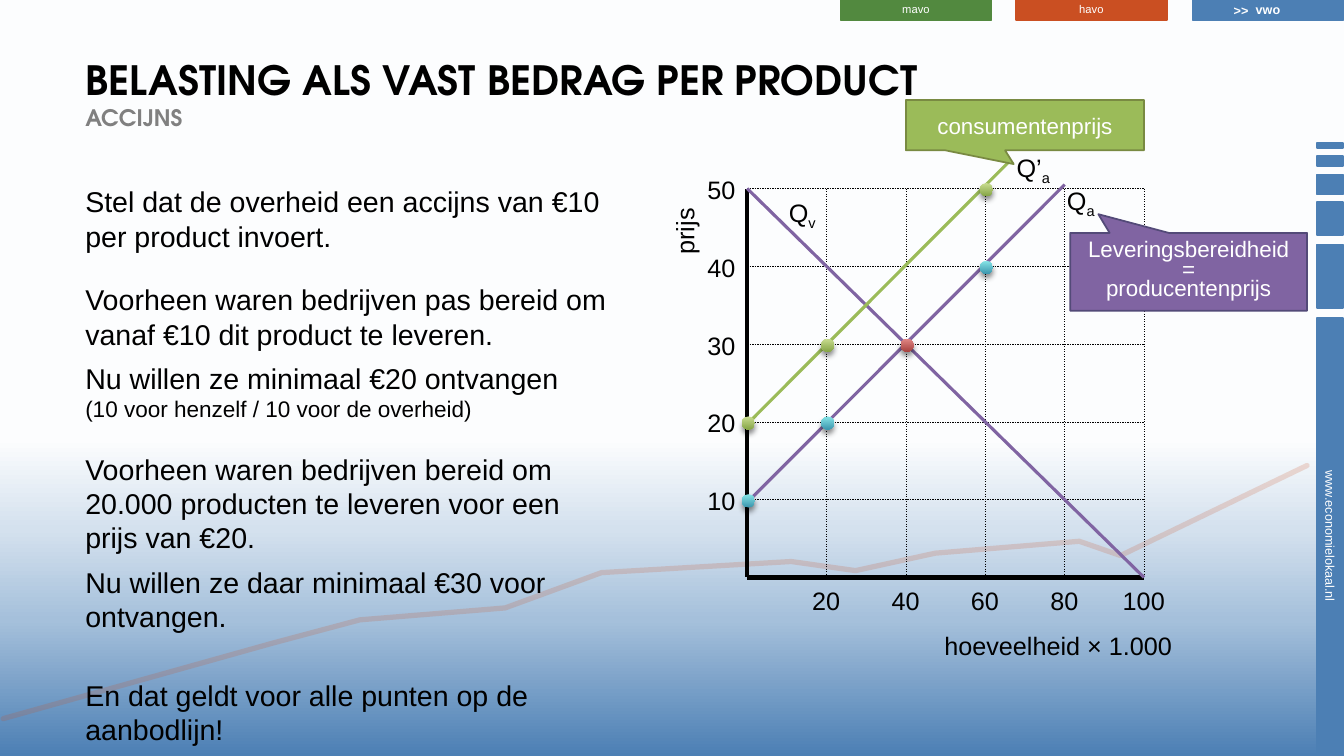
from lxml import etree
from pptx import Presentation
from pptx.dml.color import RGBColor
from pptx.enum.dml import MSO_LINE
from pptx.enum.shapes import MSO_CONNECTOR, MSO_SHAPE
from pptx.enum.text import MSO_ANCHOR, PP_ALIGN
from pptx.oxml.ns import qn
from pptx.util import Cm, Pt

STRAIGHT = MSO_CONNECTOR.STRAIGHT
RECTANGLE = MSO_SHAPE.RECTANGLE
OVAL = MSO_SHAPE.OVAL
CALLOUT = MSO_SHAPE.RECTANGULAR_CALLOUT
DASH = MSO_LINE.DASH
MIDDLE = MSO_ANCHOR.MIDDLE
CENTER = PP_ALIGN.CENTER

BLUE, ORANGE, LEAF = "4C7FB4", "CA4F22", "52893F"
PURPLE, GREEN, BLACK, WHITE = "8064A2", "9BBB59", "000000", "FFFFFF"
RED_DOT, CYAN_DOT, GREEN_DOT = ("E18785", "A7423F"), ("85E4E6", "3C96AE"), ("C9DD90", "86A547")

ORIGIN_X, ORIGIN_Y = 18.83, 14.55
CM_PER_QUANTITY, CM_PER_PRICE = 0.1, 0.196
MAX_QUANTITY, MAX_PRICE = 100, 50

SIDE_BARS = [(13.51, 11, "www.economielokaal.nl"), (6.96, 1.6, ""), (5.51, 0.84, ""),
             (4.65, 0.5, ""), (4.06, 0.25, ""), (3.66, 0.13, "")]
TREND = [(32.94, 11.73), (28.24, 14), (27.2, 13.64), (23.57, 13.94), (21.56, 14.38),
         (19.94, 14.15), (15.16, 14.43), (12.73, 15.32), (9.07, 15.62), (6.86, 16.21),
         (0.08, 18.11)]
STORY = [
    (0, "Stel dat de overheid een accijns van €10 per product invoert.", ""),
    (21, "Voorheen waren bedrijven pas bereid om vanaf €10 dit product te leveren.", ""),
    (7.2, "Nu willen ze minimaal €20 ontvangen\n", "(10 voor henzelf / 10 voor de overheid)"),
    (21, "Voorheen waren bedrijven bereid om 20.000 producten te leveren voor een prijs van €20.", ""),
    (7.2, "Nu willen ze daar minimaal €30 voor ontvangen.", ""),
    (32, "En dat geldt voor alle punten op de aanbodlijn!", ""),
]


def color(hex_value):
    """Turn a hex string into a colour."""
    return RGBColor.from_string(hex_value)


def write(paragraph, text, size=18, ink=BLACK, font="Arial", bold=False, baseline=None):
    """Append formatted text to a paragraph, breaking lines at newlines."""
    for number, line in enumerate(text.split("\n")):
        if number:
            paragraph.add_line_break()
        if not line:
            continue
        run = paragraph.add_run()
        run.text = line
        run.font.size, run.font.name, run.font.bold = Pt(size), font, bold
        run.font.color.rgb = color(ink)
        if baseline:
            run.font._element.set("baseline", str(baseline * 1000))


def gradient(owner, fill, stops, angle):
    """Give a background or shape a linear gradient of (percent, hex) stops."""
    fill.gradient()
    stop_list = owner._element.find(".//" + qn("a:gsLst"))
    for stop in list(stop_list):
        stop_list.remove(stop)
    for percent, hex_value in stops:
        stop = etree.SubElement(stop_list, qn("a:gs"), pos=str(percent * 1000))
        etree.SubElement(stop, qn("a:srgbClr"), val=hex_value)
    stop_list.getparent().find(qn("a:lin")).set("ang", str(angle * 60000))


def box(slide, kind, left, top, width, height, fill, outline):
    """Add a flat filled shape with middle-anchored text."""
    shape = slide.shapes.add_shape(kind, Cm(left), Cm(top), Cm(width), Cm(height))
    shape.shadow.inherit = False
    shape.fill.solid()
    shape.fill.fore_color.rgb = color(fill)
    shape.line.color.rgb = color(outline)
    shape.line.width = Pt(1.25)
    shape.text_frame.vertical_anchor = MIDDLE
    shape.text_frame.word_wrap = True
    shape.text_frame.paragraphs[0].alignment = CENTER
    return shape


def tab(slide, left, top, width, height, fill, text="", size=8, bold=False, rotation=0):
    """Add a coloured tab of the frame around the slide."""
    shape = box(slide, RECTANGLE, left, top, width, height, fill, fill)
    shape.rotation = rotation
    shape.text_frame.margin_top, shape.text_frame.margin_bottom = 0, Cm(0.03)
    write(shape.text_frame.paragraphs[0], text, size=size, ink=WHITE, bold=bold)


def label(slide, left, top, width, text, subscript="", height=1.02, rotation=0, wrap=False, **look):
    """Add a text box with an optional subscript and return its frame."""
    holder = slide.shapes.add_textbox(Cm(left), Cm(top), Cm(width), Cm(height))
    holder.rotation = rotation
    holder.text_frame.word_wrap = wrap
    paragraph = holder.text_frame.paragraphs[0]
    write(paragraph, text, **look)
    write(paragraph, subscript, baseline=-25)
    return holder.text_frame


def at(quantity, price):
    """Convert a quantity and price to slide coordinates in centimetres."""
    return ORIGIN_X + quantity * CM_PER_QUANTITY, ORIGIN_Y - price * CM_PER_PRICE


def line(slide, start, end, ink=BLACK, width=3, dash=None):
    """Draw a line between two (quantity, price) points."""
    (x1, y1), (x2, y2) = at(*start), at(*end)
    connector = slide.shapes.add_connector(STRAIGHT, Cm(x1), Cm(y1), Cm(x2), Cm(y2))
    connector.line.color.rgb = color(ink)
    connector.line.width = Pt(width)
    if dash:
        connector.line.dash_style = dash
    etree.SubElement(connector._element.spPr, qn("a:effectLst"))


def dots(slide, points, shades):
    """Mark (quantity, price) points with shaded, shadowed dots."""
    size = 0.33
    for point in points:
        x, y = at(*point)
        dot = slide.shapes.add_shape(OVAL, Cm(x - size / 2 + 0.03), Cm(y - size / 2 + 0.03),
                                     Cm(size), Cm(size))
        gradient(dot, dot.fill, zip((0, 100), shades), 90)
        dot.line.fill.background()
        dot.shadow.inherit = False
        effects = dot._element.spPr.find(qn("a:effectLst"))
        shadow = etree.SubElement(effects, qn("a:outerShdw"), blurRad=str(Pt(4)),
                                  dist=str(Pt(3)), dir="5400000", rotWithShape="0")
        shade = etree.SubElement(shadow, qn("a:srgbClr"), val=BLACK)
        etree.SubElement(shade, qn("a:alpha"), val="46000")


def callout(slide, left, top, width, height, fill, outline, tip, text, spacing=None):
    """Add a speech callout whose tip is relative to its centre."""
    shape = box(slide, CALLOUT, left, top, width, height, fill, outline)
    shape.adjustments[0], shape.adjustments[1] = tip
    paragraph = shape.text_frame.paragraphs[0]
    paragraph.line_spacing = spacing
    write(paragraph, text, size=16, ink=WHITE)


def frame(slide):
    """Draw the background, tabs, side bars and faint trend line."""
    gradient(slide, slide.background.fill,
             [(0, BLUE), (18, "A5C0DB"), (30, "D4E1EE"), (42, "FCFDFE"), (50, WHITE)], 270)
    for center, length, text in SIDE_BARS:
        tab(slide, 33.51 - length / 2, center - 0.33, length, 0.66, BLUE, text, 9, rotation=90)
    tab(slide, 30.05, 0, 3.81, 0.51, BLUE, "vwo", 9, True)
    tab(slide, 25.6, 0, 3.81, 0.51, ORANGE, "havo")
    tab(slide, 21.18, 0, 3.81, 0.51, LEAF, "mavo")
    label(slide, 30.84, -0.05, 0.89, ">>", height=0.64, size=9, ink=WHITE, bold=True)
    points = [(Cm(x), Cm(y)) for x, y in TREND]
    builder = slide.shapes.build_freeform(*points[0], scale=1.0)
    builder.add_line_segments(points[1:], close=False)
    trend = builder.convert_to_shape()
    trend.shadow.inherit = False
    trend.fill.background()
    trend.line.color.rgb = color(ORANGE)
    trend.line.width = Pt(3.75)
    trend.line._ln.set("cap", "rnd")
    tint = trend.line._ln.find(".//" + qn("a:srgbClr"))
    etree.SubElement(tint, qn("a:alpha"), val="19000")


def story(slide):
    """Write the heading and the explanation."""
    heading = label(slide, 1.9, 1.27, 25.45, "BELASTING ALS VAST BEDRAG PER PRODUCT\n", height=2.26,
                    wrap=True, size=28.8, font="TeX Gyre Adventor", bold=True)
    write(heading.paragraphs[0], "ACCIJNS", size=16.2, ink="808080", font="TeX Gyre Adventor", bold=True)
    body = label(slide, 1.9, 4.52, 13.72, "", height=13.08, wrap=True)
    for number, (gap, text, aside) in enumerate(STORY):
        paragraph = body.add_paragraph() if number else body.paragraphs[0]
        if gap:
            paragraph.space_before = Pt(gap)
        write(paragraph, text, size=20.4)
        write(paragraph, aside, size=16.1)


def market(slide):
    """Draw the supply and demand diagram."""
    line(slide, (0, MAX_PRICE), (0, 0))
    line(slide, (MAX_QUANTITY, 0), (0, 0))
    for price in range(10, MAX_PRICE + 1, 10):
        line(slide, (0, price), (MAX_QUANTITY, price), width=0.25, dash=DASH)
        label(slide, 17.58, at(0, price)[1] - 0.48, 1.22, str(price))
    for quantity in range(20, MAX_QUANTITY + 1, 20):
        line(slide, (quantity, MAX_PRICE), (quantity, 0), width=0.25, dash=DASH)
        width = 1.57 if quantity == MAX_QUANTITY else 1.22
        label(slide, at(quantity, 0)[0] - width / 2, 14.63, width, str(quantity))
    label(slide, 23.55, 15.77, 6.3, "hoeveelheid × 1.000")
    label(slide, 16.41, 5.31, 1.68, "prijs", rotation=270)
    line(slide, (0, MAX_PRICE), (MAX_QUANTITY, 0), PURPLE, 2.25)
    label(slide, 19.63, 4.85, 1.22, "Q", "v")
    line(slide, (1.5, 10.4), (80, 50.5), PURPLE, 2.25)
    label(slide, 26.64, 4.55, 1.24, "Q", "a")
    dots(slide, [(40, 30)], RED_DOT)
    dots(slide, [(0, 10), (20, 20), (60, 40)], CYAN_DOT)
    line(slide, (-0.8, 19.3), (66.3, 53.6), GREEN, 2.25)
    dots(slide, [(0, 20), (20, 30), (60, 50)], GREEN_DOT)
    label(slide, 25.37, 3.71, 1.4, "Q’", "a")
    callout(slide, 22.83, 2.52, 6, 1.27, GREEN, "798A42", (-0.047, 0.773), "consumentenprijs")
    callout(slide, 26.97, 5.87, 5.97, 1.96, PURPLE, "534A78", (-0.381, -0.741),
            "Leveringsbereidheid\n=\nproducentenprijs", Pt(14))


def main():
    """Build and save the slide."""
    deck = Presentation()
    deck.slide_width, deck.slide_height = Cm(33.87), Cm(19.05)
    slide = deck.slides.add_slide(deck.slide_layouts[6])
    frame(slide)
    story(slide)
    market(slide)
    deck.save("out.pptx")


if __name__ == "__main__":
    main()
